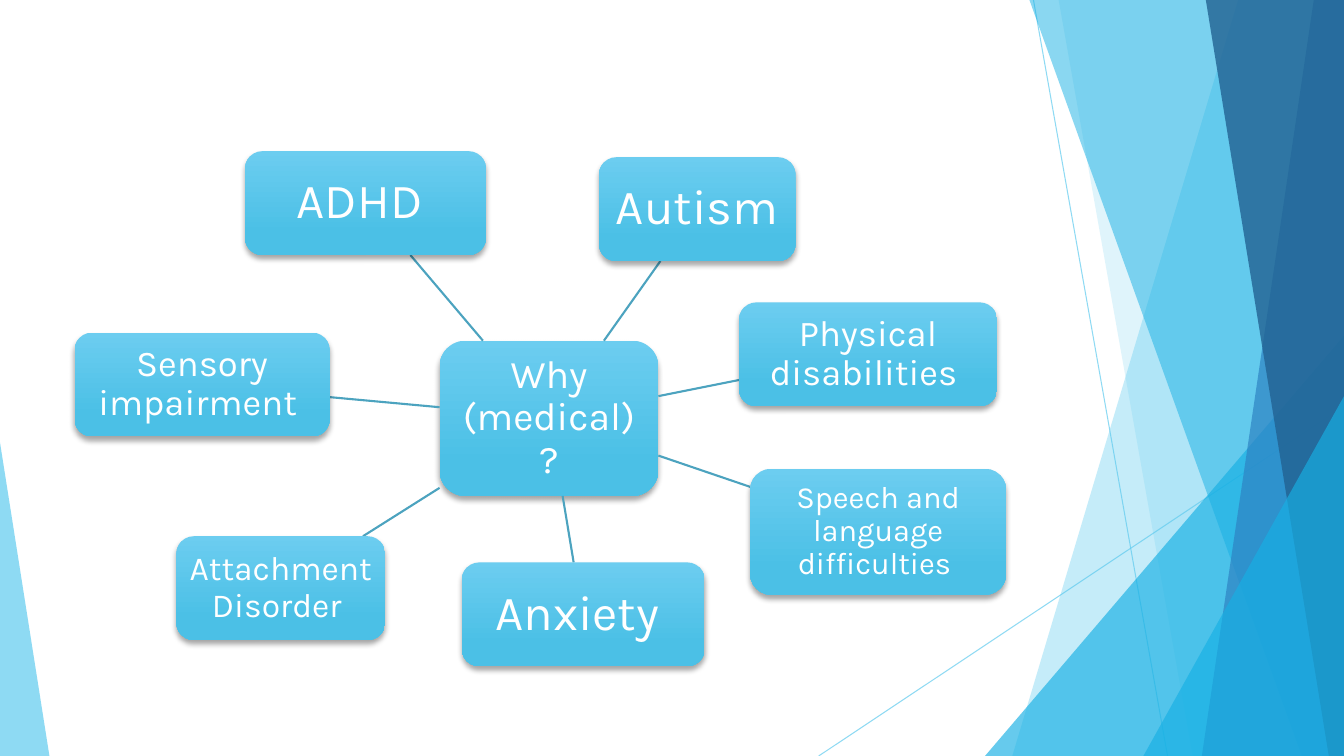
from lxml.etree import SubElement as sub
from pptx import Presentation
from pptx.dml.color import RGBColor
from pptx.enum.shapes import MSO_CONNECTOR as Conn, MSO_SHAPE as Kind
from pptx.enum.text import MSO_ANCHOR as Anchor, PP_ALIGN as Align
from pptx.oxml.ns import qn
from pptx.util import Emu, Pt

WIDE, HIGH = 1333, 750  # 100 px to the inch


def px(n):
    return Emu(n * 9144)


def rgb(code):
    return RGBColor.from_string(code)


class Board:
    font = "Karla"
    ink = "FFFFFF"
    top, low = "6CCDF0", "4BC0E6"
    link = "4CA3BF"

    def __init__(self, deck):
        self.slide = deck.slides.add_slide(deck.slide_layouts[6])
        self.shapes = self.slide.shapes

    def fade(self, part, alpha):
        """Set the opacity, in percent, of the solid colour in a part."""
        for tone in part.iter(qn("a:srgbClr")):
            sub(tone, qn("a:alpha"), val=str(alpha * 1000))

    def tint(self, shape, color, alpha):
        shape.shadow.inherit = False
        shape.fill.solid()
        shape.fill.fore_color.rgb = rgb(color)
        shape.line.fill.background()
        self.fade(shape._element.spPr, alpha)

    def pane(self, top, base, color, alpha):
        """Full-height band from a slanted left edge to the right side."""
        form = self.shapes.build_freeform(px(top), 0)
        form.add_line_segments(
            [(px(x), px(y)) for x, y in ((WIDE, 0), (WIDE, HIGH), (base, HIGH))])
        self.tint(form.convert_to_shape(), color, alpha)

    def wedge(self, x, y, wide, tip, color, alpha):
        """Triangle standing on the bottom edge; tip is 0 left, 1 right."""
        shape = self.shapes.add_shape(
            Kind.ISOSCELES_TRIANGLE, px(x), px(y), px(wide), px(HIGH - y))
        shape.adjustments[0] = tip
        self.tint(shape, color, alpha)

    def line(self, start, end, color, width, alpha=100):
        line = self.shapes.add_connector(
            Conn.STRAIGHT, *[px(n) for n in (*start, *end)])
        line.line.color.rgb = rgb(color)
        line.line.width = Pt(width)
        props = line._element.spPr
        if alpha < 100:
            self.fade(props, alpha)
        sub(props, qn("a:effectLst"))

    def node(self, text, box, size, inset):
        shape = self.shapes.add_shape(
            Kind.ROUNDED_RECTANGLE, *[px(n) for n in box])
        shape.line.fill.background()

        # Gradient from top to bottom
        shape.fill.gradient()
        shape.fill.gradient_angle = 270
        stops = shape.fill.gradient_stops
        for stop, place, color in zip(stops, (0, 0.78), (self.top, self.low)):
            stop.position = place
            stop.color.rgb = rgb(color)

        # Soft shadow below
        shape.shadow.inherit = False
        glow = sub(shape._element.spPr.find(qn("a:effectLst")),
                   qn("a:outerShdw"), blurRad=str(Pt(4)), dist=str(Pt(3)),
                   dir="5400000", rotWithShape="0")
        sub(glow, qn("a:srgbClr"), val="000000")
        self.fade(glow, 35)

        # Label
        frame = shape.text_frame
        frame.text = text
        frame.word_wrap = True
        frame.vertical_anchor = Anchor.MIDDLE
        frame.margin_left = frame.margin_right = px(inset)
        frame.margin_top = frame.margin_bottom = px(inset)
        para = frame.paragraphs[0]
        para.alignment = Align.CENTER
        para.line_spacing = 0.9
        font = para.runs[0].font
        font.name, font.size = self.font, Pt(size)
        font.color.rgb = rgb(self.ink)


def main():
    deck = Presentation()
    deck.slide_width, deck.slide_height = px(WIDE), px(HIGH)
    board = Board(deck)

    # Facets along the sides
    board.line((1025, 0), (1158, HIGH), "5FCBEF", 0.75, 70)
    board.line((WIDE, 403), (812, HIGH), "5FCBEF", 0.75, 70)
    board.pane(1228, 1004, "5FCBEF", 36)
    board.pane(1050, 1183, "5FCBEF", 20)
    board.wedge(977, 333, 356, 1, "17B0E4", 66)
    board.pane(1021, 1291, "17B0E4", 50)
    board.pane(1303, 1192, "2E83C3", 70)
    board.pane(1196, 1318, "226292", 80)
    board.wedge(1134, 393, 199, 1, "17B0E4", 66)
    board.wedge(0, 439, 49, 0, "5FCBEF", 70)

    # Hub
    board.node("Why (medical)?", (436, 338, 217, 154), 28, 8)

    # Causes: label, box, text size, inset, link from the hub
    causes = [
        ("ADHD ", (243, 150, 239, 103), 35, 10, (479, 338), (407, 253)),
        ("Autism", (594, 156, 195, 103), 35, 10, (599, 338), (655, 259)),
        ("Speech and language difficulties ", (744, 465, 254, 125), 22, 6,
         (653, 452), (744, 483)),
        ("Anxiety ", (458, 558, 241, 103), 35, 10, (558, 492), (569, 558)),
        ("Attachment Disorder ", (175, 532, 207, 103), 24, 7,
         (436, 484), (360, 532)),
        ("Physical disabilities ", (733, 300, 256, 103), 26, 7,
         (653, 393), (733, 377)),
        ("Sensory impairment ", (74, 330, 253, 103), 26, 7,
         (436, 404), (327, 394)),
    ]
    for text, box, size, inset, start, end in causes:
        board.line(start, end, board.link, 1.5)
        board.node(text, box, size, inset)

    deck.save("out.pptx")


if __name__ == "__main__":
    main()
